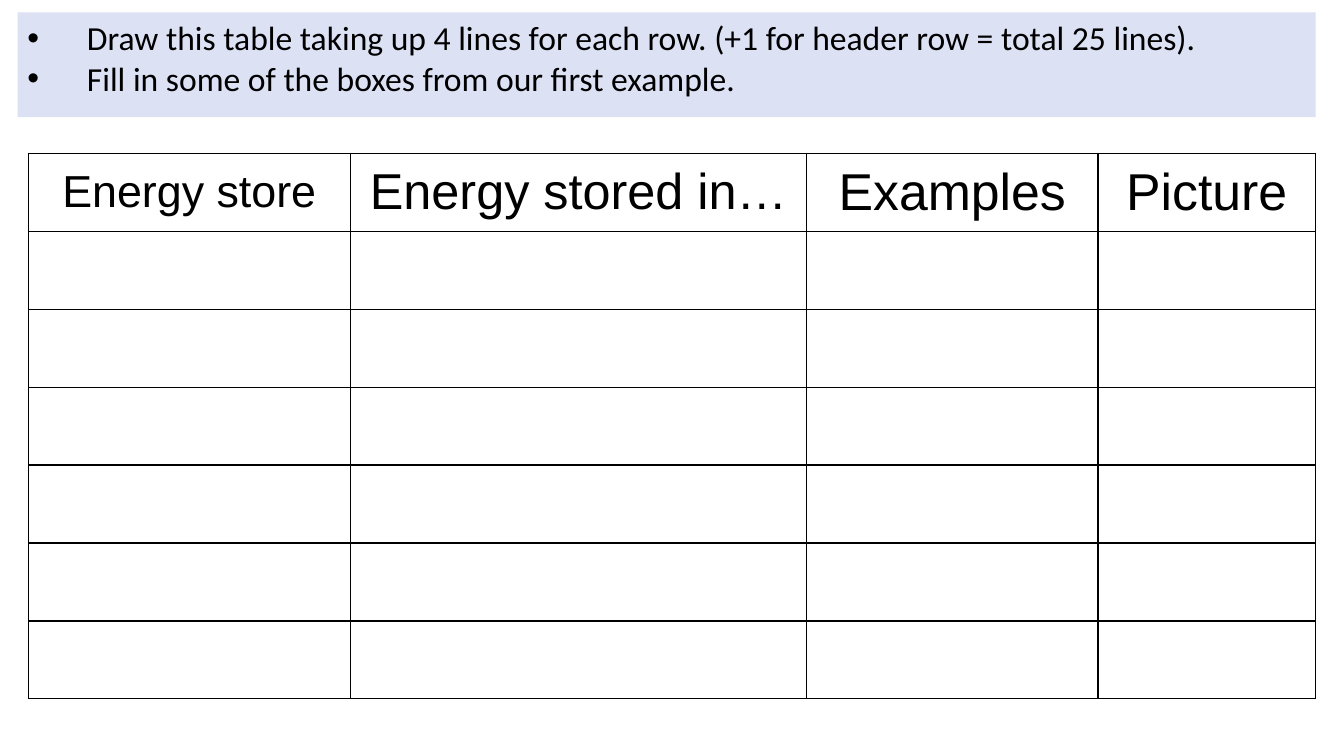
import pptx
import pptx.dml.color
import pptx.enum.shapes
import pptx.enum.text
import pptx.oxml
import pptx.oxml.ns
import pptx.util

Pt = pptx.util.Pt
COLOURS = {"black": "000000", "panel": "DCE1F4"}
NS = pptx.oxml.ns.nsdecls("a")


def set_font(paragraph, name, size):
    paragraph.font.name = name
    paragraph.font.size = Pt(size)
    paragraph.font.color.rgb = pptx.dml.color.RGBColor.from_string(COLOURS["black"])


deck = pptx.Presentation()
deck.slide_width, deck.slide_height = Pt(960), Pt(540)
slide = deck.slides.add_slide(deck.slide_layouts[6])

# Energy store table: one header row and six empty rows
columns = [("Energy store", 32, 230), ("Energy stored in…", 36, 326),
           ("Examples", 37, 208), ("Picture", 37, 155.5)]
row_count, row_height = 7, 55.7
energy_table = slide.shapes.add_table(
    row_count, len(columns), Pt(20.3), Pt(109.5),
    Pt(sum(width for _, _, width in columns)), Pt(row_count * row_height)).table
energy_table.first_row = False
energy_table.horz_banding = False
for row in energy_table.rows:
    row.height = Pt(row_height)

for index, (heading, size, width) in enumerate(columns):
    energy_table.columns[index].width = Pt(width)
    header = energy_table.cell(0, index)
    header.text = heading
    header.vertical_anchor = pptx.enum.text.MSO_ANCHOR.MIDDLE
    header.margin_left = header.margin_right = Pt(9.4)
    header.margin_top = header.margin_bottom = Pt(5)
    header_line = header.text_frame.paragraphs[0]
    header_line.alignment = pptx.enum.text.PP_ALIGN.CENTER
    set_font(header_line, "Arial", size)

# Thin black grid with unfilled cells
for cell in energy_table.iter_cells():
    cell.fill.background()
    properties = cell._tc.get_or_add_tcPr()
    for position, side in enumerate(("lnL", "lnR", "lnT", "lnB")):
        properties.insert(position, pptx.oxml.parse_xml(
            f'<a:{side} {NS} w="{Pt(1)}"><a:solidFill>'
            f'<a:srgbClr val="{COLOURS["black"]}"/></a:solidFill></a:{side}>'))

# Instruction panel
panel = slide.shapes.add_shape(
    pptx.enum.shapes.MSO_SHAPE.ROUNDED_RECTANGLE, Pt(12.5), Pt(8.8), Pt(927.3), Pt(74.8))
panel.adjustments[0] = 0
panel.shadow.inherit = False
panel.fill.solid()
panel.fill.fore_color.rgb = pptx.dml.color.RGBColor.from_string(COLOURS["panel"])
panel.line.fill.background()
panel.text_frame.word_wrap = True
panel.text_frame.vertical_anchor = pptx.enum.text.MSO_ANCHOR.TOP
panel.text_frame.text = "\n".join([
    "Draw this table taking up 4 lines for each row. (+1 for header row = total 25 lines).",
    "Fill in some of the boxes from our first example.",
])

# Bulleted instructions with a hanging indent
indent = Pt(42.5)
for instruction in panel.text_frame.paragraphs:
    instruction.alignment = pptx.enum.text.PP_ALIGN.LEFT
    bullet = instruction._p.get_or_add_pPr()
    bullet.set("marL", str(indent))
    bullet.set("indent", str(-indent))
    for element in ('<a:buFont {} typeface="Arial"/>', '<a:buChar {} char="•"/>',
                    f'<a:tabLst {{}}><a:tab pos="{indent}" algn="l"/></a:tabLst>'):
        bullet.append(pptx.oxml.parse_xml(element.format(NS)))
    set_font(instruction, "Calibri", 24)

deck.save("out.pptx")
